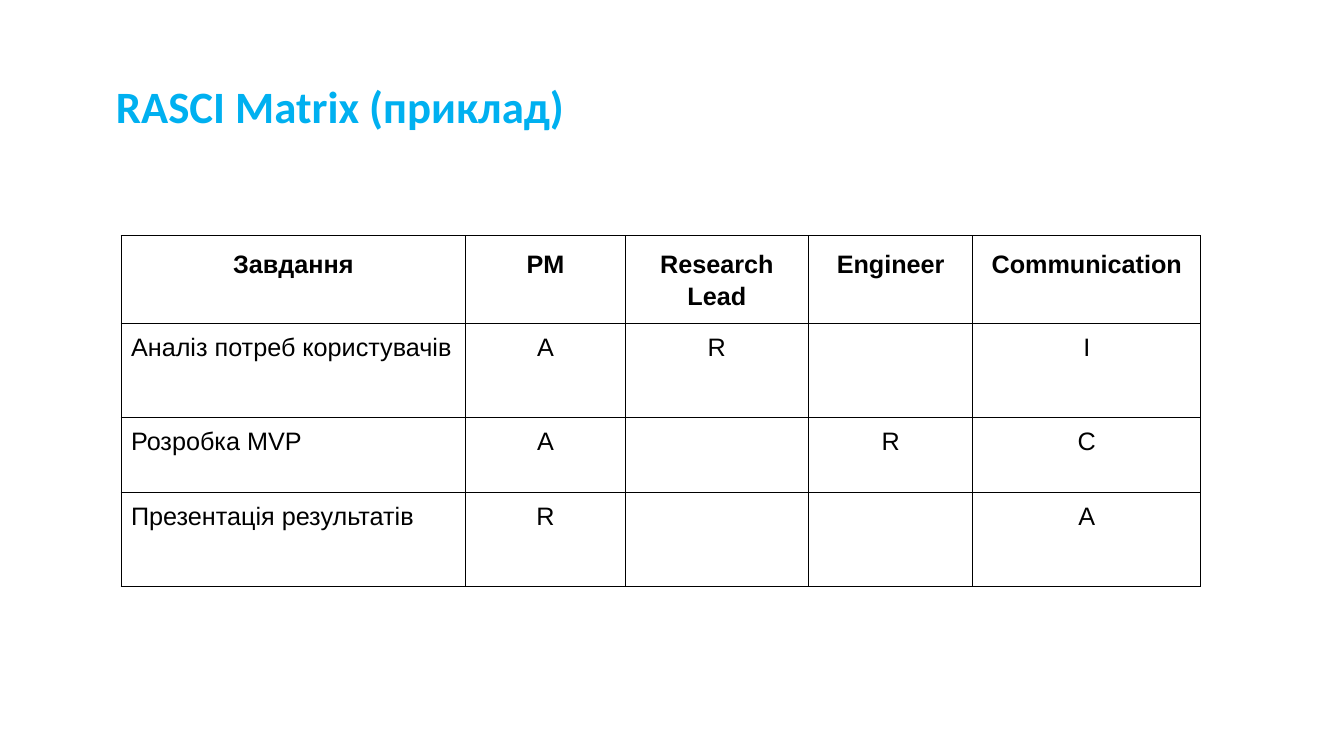
from dataclasses import dataclass

from lxml.etree import SubElement
from pptx import Presentation
from pptx.dml.color import RGBColor
from pptx.enum.text import MSO_ANCHOR as Anchor, PP_ALIGN as Align
from pptx.oxml.ns import qn
from pptx.util import Inches, Pt

# Content
TITLE = "RASCI Matrix (приклад)"
MATRIX = [
    ("Завдання", "PM", "Research Lead", "Engineer", "Communication"),
    ("Аналіз потреб користувачів", "A", "R", "", "I"),
    ("Розробка MVP", "A", "", "R", "C"),
    ("Презентація результатів", "R", "", "", "A"),
]
COLUMN_WIDTHS = (3.42, 1.58, 1.82, 1.63, 2.26)
ROW_HEIGHTS = (0.87, 0.93, 0.75, 0.93)
TABLE_LEFT, TABLE_TOP = 1.2, 2.34


@dataclass(frozen=True)
class Theme:
    accent: str = "00B0F0"
    ink: str = "000000"
    title_font: str = "Calibri"
    table_font: str = "Arial"
    title_size: int = 32
    table_size: int = 18
    border_width: float = 0.75


THEME = Theme()


def write_text(frame, text, *, font, size, color, bold=False,
               align=Align.LEFT, line_spacing=1.0):
    paragraph = frame.paragraphs[0]
    paragraph.alignment = align
    paragraph.line_spacing = line_spacing
    # Empty cells keep the type size through the paragraph font
    target = paragraph.add_run() if text else paragraph
    if text:
        target.text = text
    target.font.name = font
    target.font.size = Pt(size)
    target.font.bold = bold
    target.font.color.rgb = RGBColor.from_string(color)


def set_borders(cell, color, width):
    properties = cell._tc.get_or_add_tcPr()
    for position, side in enumerate(("lnL", "lnR", "lnT", "lnB")):
        line = SubElement(properties, qn(f"a:{side}"), w=str(Pt(width)))
        fill = SubElement(line, qn("a:solidFill"))
        SubElement(fill, qn("a:srgbClr"), val=color)
        # Border lines come before the cell fill
        properties.insert(position, line)


def add_title(slide):
    title = slide.shapes.title
    title.left, title.top = Inches(1.05), Inches(0.55)
    title.width, title.height = Inches(11.5), Inches(1.07)
    title.text_frame.vertical_anchor = Anchor.MIDDLE
    write_text(title.text_frame, TITLE, font=THEME.title_font,
               size=THEME.title_size, color=THEME.accent, bold=True,
               line_spacing=0.9)


def add_matrix(slide):
    table = slide.shapes.add_table(
        len(MATRIX), len(COLUMN_WIDTHS), Inches(TABLE_LEFT), Inches(TABLE_TOP),
        Inches(sum(COLUMN_WIDTHS)), Inches(sum(ROW_HEIGHTS))).table
    table.horz_banding = False
    for column, width in zip(table.columns, COLUMN_WIDTHS):
        column.width = Inches(width)
    for row, height in zip(table.rows, ROW_HEIGHTS):
        row.height = Inches(height)

    for row_index, row_texts in enumerate(MATRIX):
        is_header = row_index == 0
        for column_index, text in enumerate(row_texts):
            cell = table.cell(row_index, column_index)
            cell.margin_left = cell.margin_right = Inches(0.1)
            cell.margin_top = cell.margin_bottom = Inches(0.1)
            cell.fill.background()
            set_borders(cell, THEME.ink, THEME.border_width)
            is_task = column_index == 0 and not is_header
            write_text(cell.text_frame, text, font=THEME.table_font,
                       size=THEME.table_size, color=THEME.ink, bold=is_header,
                       align=Align.LEFT if is_task else Align.CENTER,
                       line_spacing=1.15 if is_header else 1.0)


def main():
    presentation = Presentation()
    presentation.slide_width = Inches(13.33)
    presentation.slide_height = Inches(7.5)
    slide = presentation.slides.add_slide(presentation.slide_layouts[5])
    add_title(slide)
    add_matrix(slide)
    presentation.save("out.pptx")


if __name__ == "__main__":
    main()
